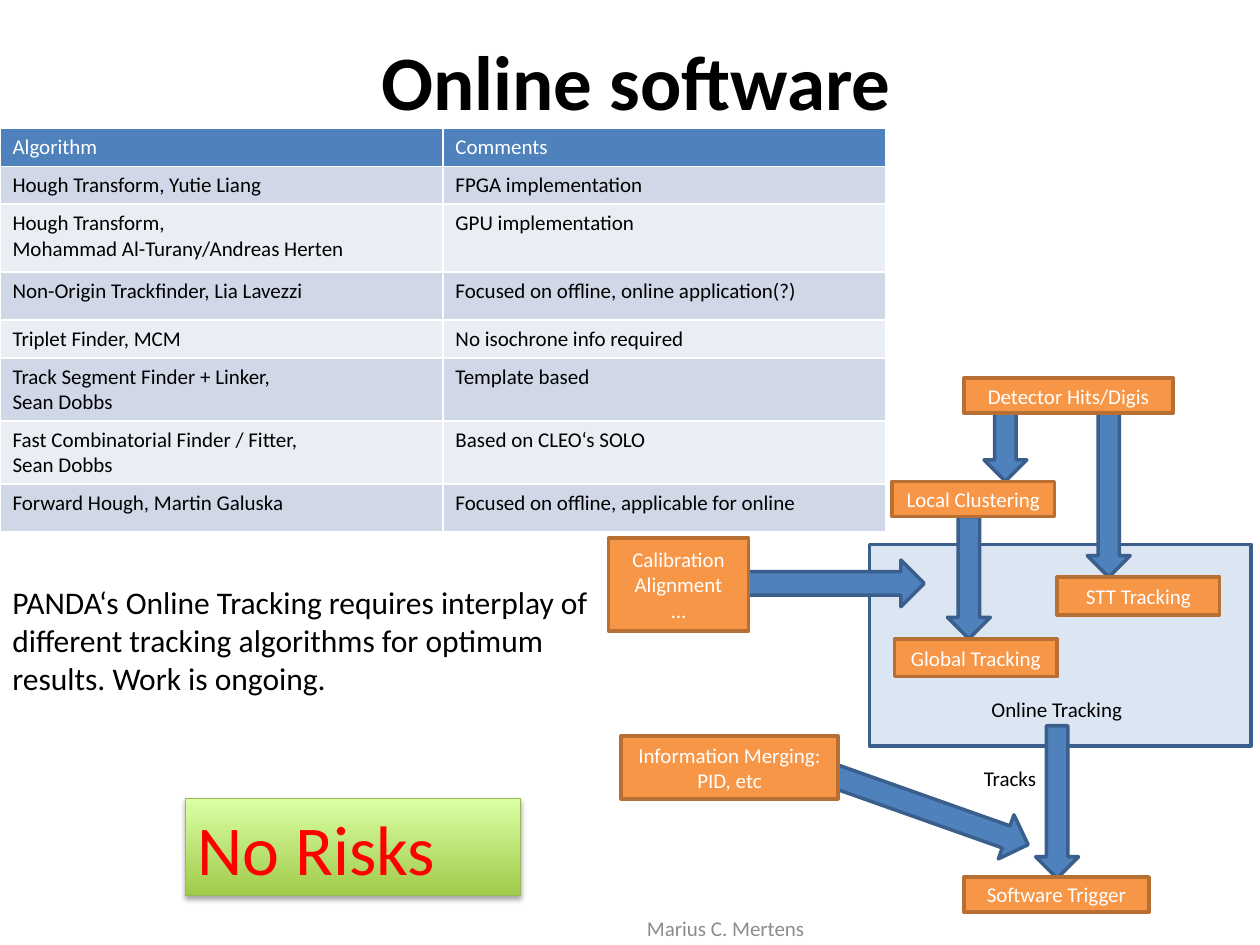
from lxml.etree import SubElement
from pptx import Presentation
from pptx.dml.color import RGBColor
from pptx.enum.shapes import MSO_SHAPE
from pptx.enum.text import MSO_ANCHOR, MSO_AUTO_SIZE, PP_ALIGN
from pptx.oxml.ns import qn
from pptx.util import Inches, Pt

FONT = "Calibri"
BLUE, DARK_BLUE, PALE_BLUE = "4F81BD", "3A5F8C", "DCE6F2"
ORANGE, DARK_ORANGE = "F79646", "B76F34"
BLACK, WHITE, GRAY, RED = "000000", "FFFFFF", "8C8C8C", "FF0000"
BANDS = ["D0D8E8", "E9EDF4"]

ALGORITHMS = [
    ("Algorithm", "Comments", 0.27),
    ("Hough Transform, Yutie Liang", "FPGA implementation", 0.27),
    ("Hough Transform,\vMohammad Al-Turany/Andreas Herten", "GPU implementation", 0.54),
    ("Non-Origin Trackfinder, Lia Lavezzi", "Focused on offline, online application(?)", 0.38),
    ("Triplet Finder, MCM", "No isochrone info required", 0.27),
    ("Track Segment Finder + Linker,\vSean Dobbs", "Template based", 0.45),
    ("Fast Combinatorial Finder / Fitter,\vSean Dobbs", "Based on CLEO‘s SOLO", 0.45),
    ("Forward Hough, Martin Galuska", "Focused on offline, applicable for online", 0.38),
]
ARROWS = [
    ((7.52, 4.1, 0.34, 0.97), 0),
    ((8.63, 3.28, 0.34, 1.3), 0),
    ((7.81, 3.28, 0.34, 0.54), 0),
    ((8.22, 5.76, 0.34, 1.21), 0),
    ((7.16, 5.55, 0.37, 1.73), 289.5),
    ((6.25, 3.73, 0.37, 1.8), 270),
]
STEPS = [
    ("Information Merging:\nPID, etc", (4.93, 5.84, 1.72, 0.5)),
    ("Calibration\nAlignment\n…", (4.83, 4.27, 1.11, 0.74)),
    ("Detector Hits/Digis", (7.65, 3, 1.66, 0.28)),
    ("Local Clustering", (7.08, 3.82, 1.29, 0.28)),
    ("STT Tracking", (8.39, 4.58, 1.29, 0.3)),
    ("Global Tracking", (7.1, 5.07, 1.29, 0.3)),
    ("Software Trigger", (7.65, 6.96, 1.47, 0.28)),
]
DIAGRAM_LABELS = [
    ("Online Tracking", (7.77, 5.48, 1.26, 0.3)),
    ("Tracks", (7.71, 6.03, 0.64, 0.3)),
]
SUMMARY = (
    "PANDA‘s Online Tracking requires interplay of different tracking "
    "algorithms for optimum results. Work is ongoing."
)


def color(value):
    return RGBColor.from_string(value)


def write(frame, text, size, text_color, bold=False, align=PP_ALIGN.LEFT):
    frame.text = text
    for paragraph in frame.paragraphs:
        paragraph.alignment = align
        paragraph.font.name = FONT
        paragraph.font.size = Pt(size)
        paragraph.font.bold = bold
        paragraph.font.color.rgb = color(text_color)


def add_text(shapes, text, box, size, text_color=BLACK, bold=False,
             align=PP_ALIGN.LEFT, anchor=MSO_ANCHOR.TOP, wrap=True):
    shape = shapes.add_textbox(*map(Inches, box))
    shape.text_frame.word_wrap = wrap
    shape.text_frame.vertical_anchor = anchor
    write(shape.text_frame, text, size, text_color, bold, align)
    return shape


def add_block(shapes, kind, box, fill, line, width=2):
    shape = shapes.add_shape(kind, *map(Inches, box))
    shape.shadow.inherit = False
    shape.fill.solid()
    shape.fill.fore_color.rgb = color(fill)
    shape.line.color.rgb = color(line)
    shape.line.width = Pt(width)
    return shape


def add_diagram(slide):
    shapes = slide.shapes.add_group_shape().shapes
    add_block(shapes, MSO_SHAPE.RECTANGLE, (6.9, 4.32, 3.03, 1.6), PALE_BLUE, DARK_BLUE)
    for box, rotation in ARROWS:
        arrow = add_block(shapes, MSO_SHAPE.DOWN_ARROW, box, BLUE, DARK_BLUE)
        arrow.rotation = rotation
    for text, box in DIAGRAM_LABELS:
        add_text(shapes, text, box, 12, wrap=False)
    for text, box in STEPS:
        step = add_block(shapes, MSO_SHAPE.RECTANGLE, box, ORANGE, DARK_ORANGE)
        step.text_frame.vertical_anchor = MSO_ANCHOR.MIDDLE
        write(step.text_frame, text, 12, WHITE, align=PP_ALIGN.CENTER)


def add_algorithm_table(slide):
    height = sum(row[-1] for row in ALGORITHMS)
    table = slide.shapes.add_table(
        len(ALGORITHMS), 2, 0, Inches(1.02), Inches(7.03), Inches(height)
    ).table
    for row_index, (*texts, row_height) in enumerate(ALGORITHMS):
        table.rows[row_index].height = Inches(row_height)
        header = row_index == 0
        for column_index, text in enumerate(texts):
            cell = table.cell(row_index, column_index)
            cell.fill.solid()
            cell.fill.fore_color.rgb = color(BLUE if header else BANDS[(row_index - 1) % 2])
            write(cell.text_frame, text, 12, WHITE if header else BLACK)


def add_verdict(slide):
    verdict = add_block(slide.shapes, MSO_SHAPE.RECTANGLE, (1.47, 6.34, 2.66, 0.77),
                        "A0CA4A", "98B955", 0.75)
    verdict.fill.gradient()
    verdict.fill.gradient_angle = 90
    for stop, value in zip(verdict.fill.gradient_stops, ("A0CA4A", "DAFFA5")):
        stop.color.rgb = color(value)
    effects = verdict.element.spPr.find(qn("a:effectLst"))
    shadow = SubElement(effects, qn("a:outerShdw"), blurRad=str(Pt(3.1)),
                        dist=str(Pt(1.8)), dir="5400000", rotWithShape="0")
    shadow_color = SubElement(shadow, qn("a:srgbClr"), val=BLACK)
    SubElement(shadow_color, qn("a:alpha"), val="35000")
    verdict.text_frame.vertical_anchor = MSO_ANCHOR.TOP
    verdict.text_frame.auto_size = MSO_AUTO_SIZE.SHAPE_TO_FIT_TEXT
    write(verdict.text_frame, "No Risks", 40, RED)


def main():
    presentation = Presentation()
    presentation.slide_width = Inches(10)
    presentation.slide_height = Inches(7.5)
    slide = presentation.slides.add_slide(presentation.slide_layouts[6])
    add_text(slide.shapes, "Online software", (0.55, 0.01, 9, 1.25), 44, bold=True,
             align=PP_ALIGN.CENTER, anchor=MSO_ANCHOR.MIDDLE)
    add_text(slide.shapes, "Marius C. Mertens", (3.08, 7.25, 5.36, 0.24), 12, GRAY,
             align=PP_ALIGN.CENTER, anchor=MSO_ANCHOR.MIDDLE)
    add_diagram(slide)
    add_algorithm_table(slide)
    add_text(slide.shapes, SUMMARY, (0, 4.58, 4.82, 1.01), 18)
    add_verdict(slide)
    presentation.save("out.pptx")


if __name__ == "__main__":
    main()
